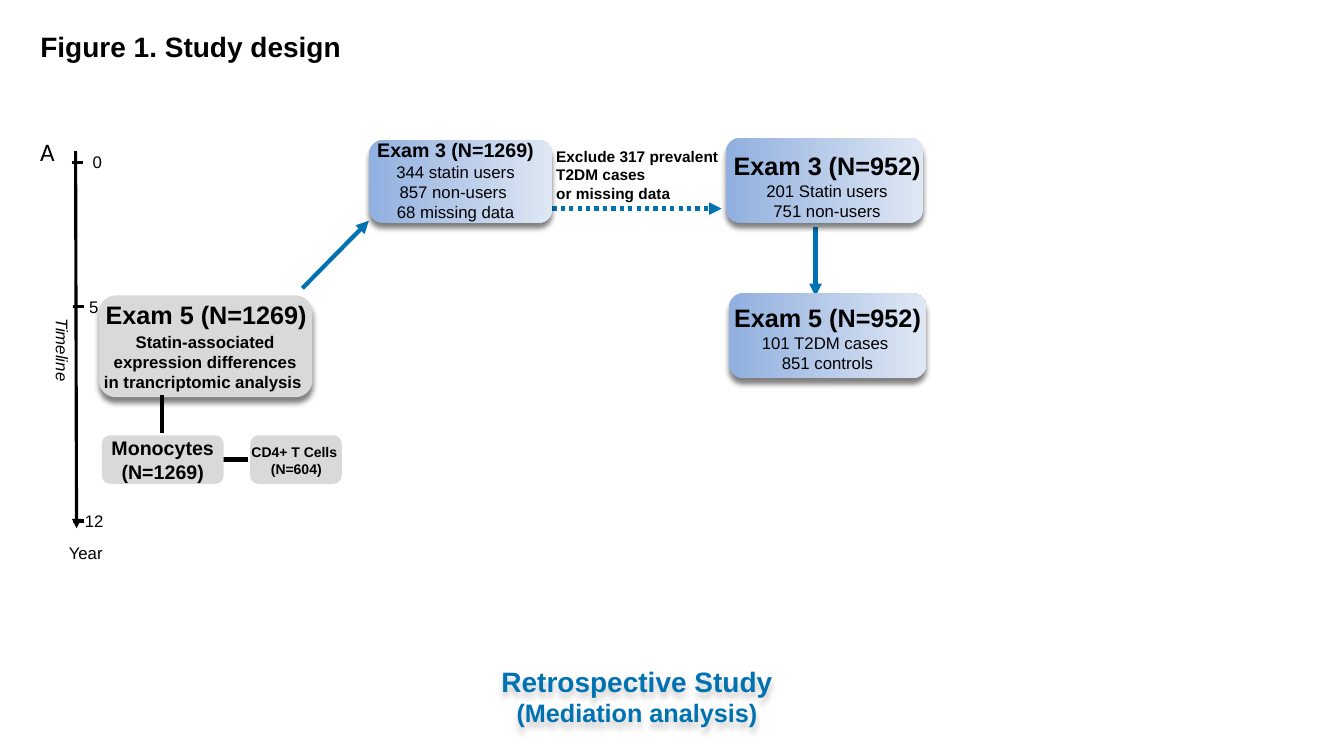
from lxml.etree import SubElement
from pptx import Presentation
from pptx.dml.color import RGBColor
from pptx.enum.dml import MSO_LINE
from pptx.enum.shapes import MSO_CONNECTOR, MSO_SHAPE
from pptx.enum.text import MSO_ANCHOR, PP_ALIGN
from pptx.oxml.ns import qn
from pptx.util import Pt

BLACK = RGBColor(0x00, 0x00, 0x00)
BLUE = RGBColor(0x00, 0x72, 0xB2)
GRAY = RGBColor(0xD9, 0xD9, 0xD9)
SKY = RGBColor(0x91, 0xB0, 0xDF)
MIST = RGBColor(0xDF, 0xE7, 0xF4)


class StudyDesignPage:
    """Draws the elements of the study design in one style on one page."""

    def __init__(self, deck, font="Arial"):
        self.page = deck.slides.add_slide(deck.slide_layouts[5])
        self.font = font

    def fill_text(self, shape, lines, align=PP_ALIGN.CENTER, color=BLACK,
                  wrap=True, italic=False, font=None, anchor=MSO_ANCHOR.TOP):
        frame = shape.text_frame
        frame.text = "\n".join(words for words, size, bold in lines)
        frame.word_wrap = wrap
        frame.vertical_anchor = anchor
        for para, (words, size, bold) in zip(frame.paragraphs, lines):
            para.alignment = align
            for span in para.runs:
                span.font.name = font or self.font
                span.font.size = Pt(size)
                span.font.bold = bold
                span.font.italic = italic
                span.font.color.rgb = color

    def title(self, words, left, top, width, height):
        box = self.page.shapes.title
        box.left, box.top, box.width, box.height = map(Pt, (left, top, width, height))
        self.fill_text(box, [(words, 20, True)], PP_ALIGN.LEFT)

    def text(self, left, top, width, height, lines, **style):
        box = self.page.shapes.add_textbox(*map(Pt, (left, top, width, height)))
        self.fill_text(box, lines, **style)
        return box

    def shadow(self, shape, alpha):
        shape.shadow.inherit = False
        effects = shape._element.spPr.find(qn("a:effectLst"))
        outer = SubElement(effects, qn("a:outerShdw"), blurRad=str(Pt(4)),
                           dist=str(Pt(4)), dir="5400000", algn="t", rotWithShape="0")
        color = SubElement(outer, qn("a:srgbClr"), val="000000")
        SubElement(color, qn("a:alpha"), val=str(alpha * 1000))

    def card(self, left, top, width, height, gradient=False, raised=True):
        box = self.page.shapes.add_shape(
            MSO_SHAPE.ROUNDED_RECTANGLE, *map(Pt, (left, top, width, height)))
        box.line.fill.background()
        if gradient:
            box.fill.gradient()
            box.fill.gradient_angle = 0
            for stop, color in zip(box.fill.gradient_stops, (SKY, MIST)):
                stop.color.rgb = color
        else:
            box.fill.solid()
            box.fill.fore_color.rgb = GRAY
        box.shadow.inherit = False
        if raised:
            self.shadow(box, 50)
        return box

    def line(self, x1, y1, x2, y2, color=BLACK, weight=3, arrow=False, dash=None):
        line = self.page.shapes.add_connector(
            MSO_CONNECTOR.STRAIGHT, *map(Pt, (x1, y1, x2, y2)))
        line.line.color.rgb = color
        line.line.width = Pt(weight)
        if dash:
            line.line.dash_style = dash
        if arrow:
            SubElement(line.line._get_or_add_ln(), qn("a:tailEnd"), type="triangle")
        SubElement(line._element.spPr, qn("a:effectLst"))


def main():
    deck = Presentation()
    deck.slide_width, deck.slide_height = Pt(960), Pt(540)
    design = StudyDesignPage(deck)
    design.title("Figure 1. Study design", 21.6, 17.3, 519, 31.5)

    design.text(21.6, 93.6, 28, 29, [("A", 18, False)],
                align=PP_ALIGN.LEFT, font="Calibri")
    design.line(54, 108, 54.7, 377.3, weight=2.25, arrow=True)
    for label, center, tick_left, tick_y in (
            ("0", 69.5, 51.1, 115.9), ("5", 67, 51.8, 218.9), ("12", 67.3, 51.8, 372.2)):
        design.line(tick_left, tick_y, tick_left + 8, tick_y, weight=2.25)
        design.text(center - 15, tick_y - 10.8, 30, 21.6,
                    [(label, 12, False)], wrap=False)
    timeline = design.text(7.9, 239, 73.4, 21.6, [("Timeline", 12, False)], italic=True)
    timeline.rotation = 90
    design.text(41.8, 383.8, 38.9, 21.6, [("Year", 12, False)], wrap=False)

    design.line(582.5, 162, 582.5, 211.7, BLUE, arrow=True)
    design.line(216, 205.9, 263.5, 157.7, BLUE, arrow=True)
    design.line(394.6, 149, 515.5, 149, BLUE, arrow=True, dash=MSO_LINE.ROUND_DOT)
    design.text(390.2, 101.5, 141.8, 47.5,
                [("Exclude 317 prevalent T2DM cases", 11, True),
                 ("or missing data", 11, True)], align=PP_ALIGN.LEFT)

    design.card(263.5, 100.1, 131, 59, gradient=True)
    design.text(262.1, 95, 126.7, 67.7,
                [("Exam 3 (N=1269)", 14, True), ("344 statin users", 12, False),
                 ("857 non-users ", 12, False), ("68 missing data", 12, False)],
                wrap=False)
    design.card(518.4, 98.6, 141.1, 60.5, gradient=True)
    design.text(515.5, 103.7, 150.5, 58.3,
                [("Exam 3 (N=952)", 18, True), ("201 Statin users", 12, False),
                 ("751 non-users", 12, False)])
    design.card(520.6, 209.5, 141.1, 60.5, gradient=True)
    design.text(512.6, 212.4, 157, 58.3,
                [("Exam 5 (N=952)", 18, True), ("101 T2DM cases ", 12, False),
                 ("851 controls", 12, False)])

    design.card(70.6, 211, 152.6, 72.7)
    design.text(68.4, 210.2, 159.1, 28.8, [("Exam 5 (N=1269)", 18, True)],
                align=PP_ALIGN.LEFT, wrap=False)
    design.text(67, 233.3, 159.1, 51.1,
                [("Statin-associated expression differences", 12, True),
                 ("in trancriptomic analysis ", 12, True)])
    design.line(115.9, 282.2, 115.9, 309.6)
    design.line(177.1, 328.3, 158.4, 328.3)
    monocytes = design.card(72.7, 311, 87.1, 34.6, raised=False)
    frame = monocytes.text_frame
    frame.margin_left = frame.margin_right = Pt(3.6)
    frame.margin_top = frame.margin_bottom = Pt(2.2)
    design.fill_text(monocytes, [("Monocytes ", 14, True), ("(N=1269)", 14, True)],
                     anchor=MSO_ANCHOR.MIDDLE)
    design.card(178.6, 311, 65.5, 34.6, raised=False)
    design.text(169.2, 313.2, 82.1, 31.7,
                [("CD4+ T Cells", 10, True), (" (N=604)", 10, True)])

    study = design.text(303.1, 470.9, 303.8, 53.3,
                        [("Retrospective Study", 20, True),
                         ("(Mediation analysis)", 18, True)], color=BLUE)
    design.shadow(study, 20)
    deck.save("out.pptx")


if __name__ == "__main__":
    main()
